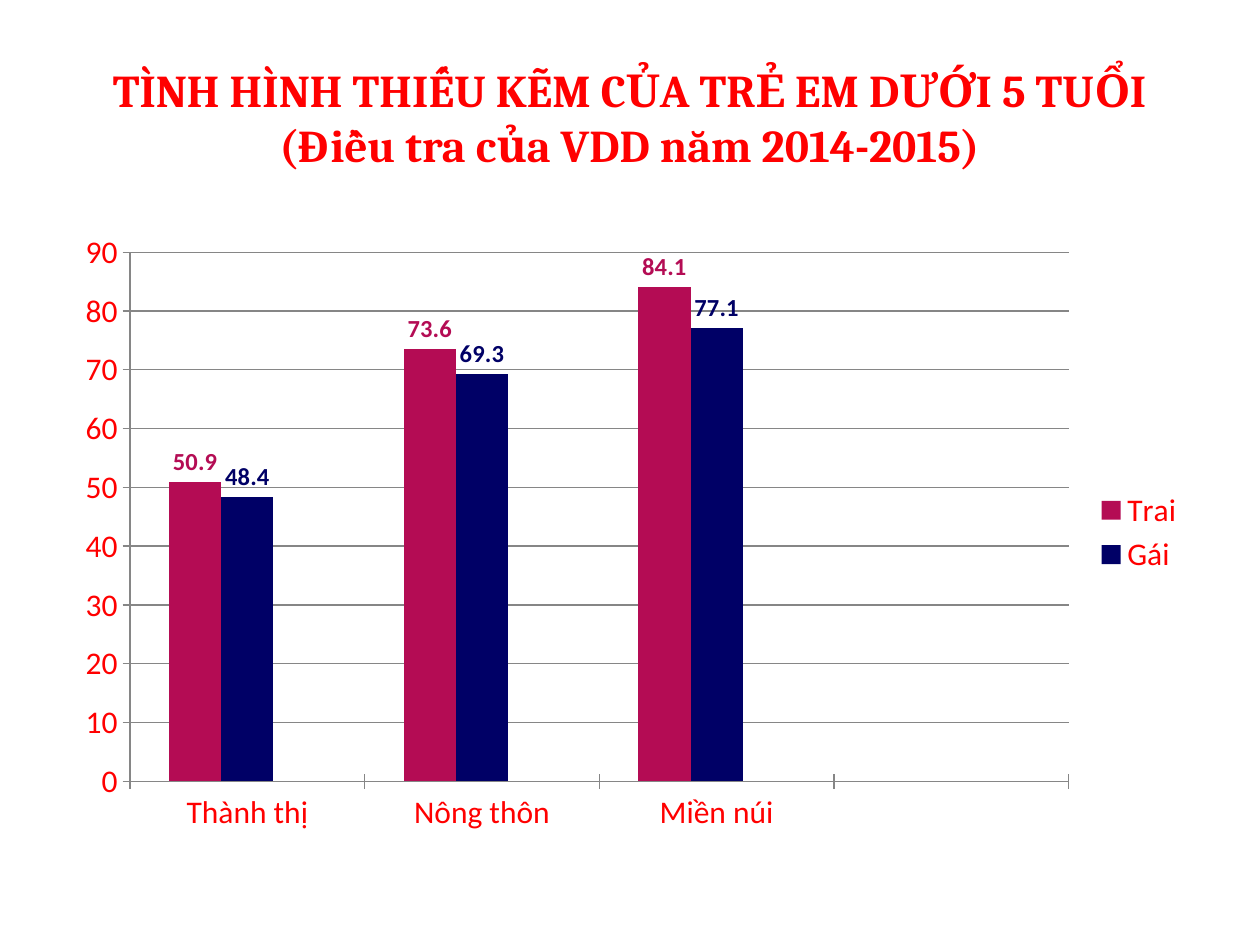
from lxml import etree
from pptx import Presentation
from pptx.chart.data import CategoryChartData
from pptx.dml.color import RGBColor
from pptx.enum import chart as ch, text
from pptx.oxml.ns import qn
from pptx.util import Cm, Pt

RED = RGBColor(0xFF, 0x00, 0x00)
CRIMSON = RGBColor(0xB4, 0x0C, 0x54)
NAVY = RGBColor(0x00, 0x00, 0x66)
GREEN = RGBColor(0x9B, 0xBB, 0x59)
GREY = RGBColor(0x86, 0x86, 0x86)
WHITE = RGBColor(0xFF, 0xFF, 0xFF)

TITLE_LINES = ("TÌNH HÌNH THIẾU KẼM CỦA TRẺ EM DƯỚI 5 TUỔI",
               "(Điều tra của VDD năm 2014-2015)")
AREAS = ("Thành thị", "Nông thôn", "Miền núi", "")
SERIES = (("Trai", (50.9, 73.6, 84.1, None), CRIMSON),
          ("Gái", (48.4, 69.3, 77.1, None), NAVY),
          ("Series 3", (None,) * 4, GREEN))


def style_font(font, size, color, bold=False, name="Calibri"):
    font.name = name
    font.size = Pt(size)
    font.bold = bold
    font.color.rgb = color


def add_title(slide, left, top, width, height):
    frame = slide.shapes.add_textbox(left, top, width, height).text_frame
    frame.word_wrap = True
    frame.vertical_anchor = text.MSO_ANCHOR.MIDDLE
    heading = frame.paragraphs[0]
    heading.alignment = text.PP_ALIGN.CENTER
    for number, line in enumerate(TITLE_LINES):
        if number:
            heading.add_line_break()
        run = heading.add_run()
        run.text = line
        style_font(run.font, 26, RED, True, "Cambria")


def style_axis(axis):
    axis.major_tick_mark = ch.XL_TICK_MARK.CROSS
    axis.minor_tick_mark = ch.XL_TICK_MARK.NONE
    axis.format.line.color.rgb = GREY
    style_font(axis.tick_labels.font, 18, RED)


def style_series(series, color):
    series.format.fill.solid()
    series.format.fill.fore_color.rgb = color
    series.invert_if_negative = False
    if any(value is not None for value in series.values):
        labels = series.data_labels
        labels.show_value = True
        labels.position = ch.XL_LABEL_POSITION.OUTSIDE_END
        style_font(labels.font, 14, color, True)


def add_legend(chart, hidden):
    chart.has_legend = True
    legend = chart.legend
    legend.position = ch.XL_LEGEND_POSITION.RIGHT
    legend.include_in_layout = False
    style_font(legend.font, 18, RED)
    entry = etree.Element(qn("c:legendEntry"))
    etree.SubElement(entry, qn("c:idx")).set("val", str(hidden))
    etree.SubElement(entry, qn("c:delete")).set("val", "1")
    legend._element.find(qn("c:legendPos")).addnext(entry)


def fill_plot_area(chart, color):
    plot_area = chart._chartSpace.chart.plotArea
    properties = etree.SubElement(plot_area, qn("c:spPr"))
    fill = etree.SubElement(properties, qn("a:solidFill"))
    etree.SubElement(fill, qn("a:srgbClr")).set("val", str(color))


def add_zinc_chart(slide, left, top, width, height):
    figures = CategoryChartData()
    figures.categories = AREAS
    for name, values, _ in SERIES:
        figures.add_series(name, values)
    chart = slide.shapes.add_chart(ch.XL_CHART_TYPE.COLUMN_CLUSTERED,
                                   left, top, width, height, figures).chart
    chart.has_title = False
    chart.font.name = "Calibri"
    chart.font.size = Pt(18)
    columns = chart.plots[0]
    columns.vary_by_categories = False
    columns.gap_width = 150
    columns.overlap = 0
    for series, (_, _, color) in zip(columns.series, SERIES):
        style_series(series, color)
    style_axis(chart.category_axis)
    style_axis(chart.value_axis)
    chart.value_axis.minimum_scale = 0
    chart.value_axis.maximum_scale = 90
    chart.value_axis.major_unit = 10
    chart.value_axis.has_major_gridlines = True
    chart.value_axis.major_gridlines.format.line.color.rgb = GREY
    add_legend(chart, 2)
    fill_plot_area(chart, WHITE)


def main():
    deck = Presentation()
    deck.slide_width, deck.slide_height = Cm(25.4), Cm(19.05)
    slide = deck.slides.add_slide(deck.slide_layouts[6])
    margin = Cm(1.27)
    content_width = deck.slide_width - 2 * margin
    add_title(slide, margin, Cm(0.76), content_width, Cm(3.18))
    add_zinc_chart(slide, margin, Cm(4.45), content_width, Cm(12.57))
    deck.save("out.pptx")


if __name__ == "__main__":
    main()
